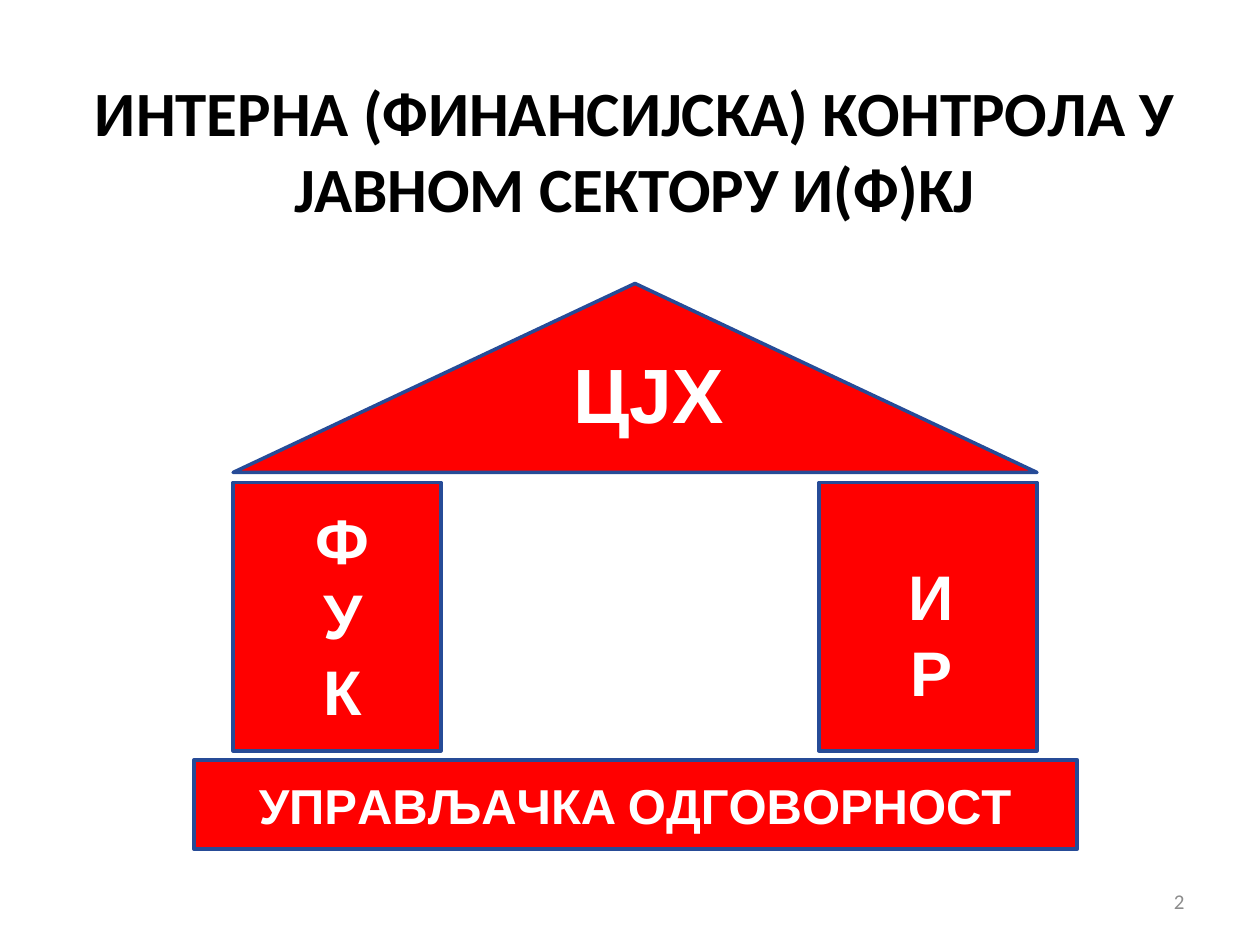
import pptx
import pptx.util
import pptx.dml.color
import pptx.enum.shapes
import pptx.enum.text

Inch = pptx.util.Inches
Shape = pptx.enum.shapes.MSO_SHAPE
Align = pptx.enum.text.PP_ALIGN
Anchor = pptx.enum.text.MSO_ANCHOR

WIDE, HIGH = 10, 7.5
COLORS = {"red": "FF0000", "edge": "264B97", "white": "FFFFFF",
          "black": "000000", "gray": "8C8C8C"}
TITLE = "ИНTEРНA (ФИНAНСИJСКA) КOНTРOЛA У JAВНOM СEКTOРУ И(Ф)КJ"

# The house: shared edges, then each part as left, top, right, bottom
LEFT, RIGHT = 1.85, 8.23
EAVES, BEAM, FLOOR = 3.75, 3.83, 5.96
PARTS = [
    (Shape.RECTANGLE, (1.54, 6.03, 8.55, 6.74)),
    (Shape.RECTANGLE, (LEFT, BEAM, 3.5, FLOOR)),
    (Shape.ISOSCELES_TRIANGLE, (LEFT, 2.25, RIGHT, EAVES)),
    (Shape.RECTANGLE, (6.5, BEAM, RIGHT, FLOOR)),
]
# Lines, centre x and y, width, height, text size
LABELS = [
    (["Ф", "У", "К"], (2.72, 4.89, 1.26, 1.92), 36),
    (["И", "Р"], (7.39, 5.03, 0.79, 1.31), 36),
    (["ЦЈХ"], (5.15, 3.12, 2.99, 0.84), 44),
    (["УПРAВЉAЧКA OДГOВOРНOСT"], (5.04, 6.39, 6.69, 0.57), 28),
]


def rgb(name):
    return pptx.dml.color.RGBColor.from_string(COLORS[name])


def write(frame, lines, color, align=Align.CENTER, anchor=Anchor.TOP, **look):
    """Fill a text frame, one paragraph a line, all in one format."""
    frame.word_wrap = True
    frame.vertical_anchor = anchor
    for i, line in enumerate(lines):
        para = frame.paragraphs[0] if i == 0 else frame.add_paragraph()
        para.alignment = align
        run = para.add_run()
        run.text = line
        for key, value in look.items():
            setattr(run.font, key, value)
        run.font.color.rgb = rgb(color)


def font(name, size, bold=True):
    return {"name": name, "size": pptx.util.Pt(size), "bold": bold}


def head(slide):
    title = slide.shapes.title
    box = {"left": 0.54, "top": 0.44, "width": 0.9 * WIDE, "height": 1.49}
    for key, value in box.items():
        setattr(title, key, Inch(value))
    write(title.text_frame, [TITLE], "black", anchor=Anchor.MIDDLE,
          **font("Calibri", 36))


def house(slide):
    for kind, (x, y, right, low) in PARTS:
        part = slide.shapes.add_shape(
            kind, *map(Inch, (x, y, right - x, low - y)))
        part.shadow.inherit = False
        part.fill.solid()
        part.fill.fore_color.rgb = rgb("red")
        part.line.color.rgb = rgb("edge")
        part.line.width = pptx.util.Pt(2)
    for lines, (x, y, w, h), size in LABELS:
        label = slide.shapes.add_textbox(
            *map(Inch, (x - w / 2, y - h / 2, w, h)))
        write(label.text_frame, lines, "white", **font("Arial", size))


def number(slide):
    box = slide.shapes.add_textbox(*map(Inch, (7.17, 6.95, 2.33, 0.4)))
    write(box.text_frame, ["2"], "gray", Align.RIGHT, Anchor.MIDDLE,
          **font("Calibri", 12, False))


def main():
    deck = pptx.Presentation()
    deck.slide_width, deck.slide_height = Inch(WIDE), Inch(HIGH)
    slide = deck.slides.add_slide(deck.slide_layouts[5])
    head(slide)
    house(slide)
    number(slide)
    deck.save("out.pptx")


if __name__ == "__main__":
    main()
